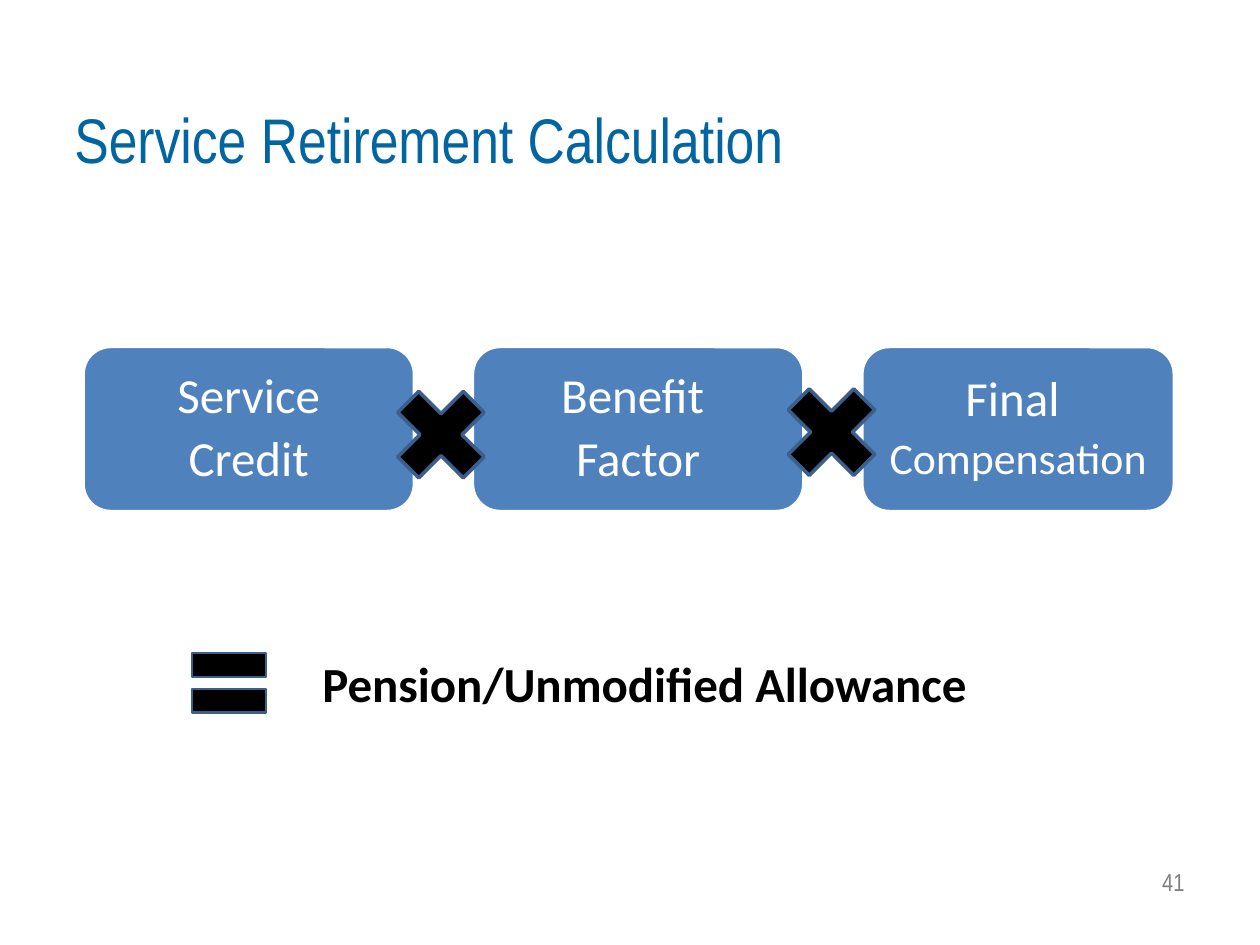
from pptx import Presentation
from pptx.dml.color import RGBColor
from pptx.enum.shapes import MSO_SHAPE
from pptx.enum.text import MSO_ANCHOR, MSO_AUTO_SIZE, PP_ALIGN
from pptx.util import Inches, Pt

ROUNDED = MSO_SHAPE.ROUNDED_RECTANGLE
TIMES, EQUALS = MSO_SHAPE.MATH_MULTIPLY, MSO_SHAPE.MATH_EQUAL
LEFT, CENTER, RIGHT = PP_ALIGN.LEFT, PP_ALIGN.CENTER, PP_ALIGN.RIGHT
TOP, MIDDLE = MSO_ANCHOR.TOP, MSO_ANCHOR.MIDDLE

TITLE = "Service Retirement Calculation"
FACTORS = [
    (2.63, [("Service", 28), ("Credit", 28)]),
    (2.63, [("Benefit ", 28), ("Factor", 28)]),
    (2.48, [("Final ", 28), ("Compensation", 25)]),
]
RESULT = "Pension/Unmodified Allowance"
PAGE = "41"
OPERATORS = [
    (EQUALS, 1.42, 5.02, 0.8, 1.25),
    (TIMES, 6.1, 2.93, 1, 2),
    (TIMES, 3, 2.95, 1, 2),
]
CARD_LEFT, CARD_TOP, CARD_HEIGHT, CARD_GAP = 0.66, 2.75, 1.31, 0.46
CARD_INSET = 0.12

THEME = {
    "heading_font": "Arial Narrow", "body_font": "Calibri",
    "title": "0065A1", "card": "4F81BD", "white": "FFFFFF",
    "black": "000000", "outline": "3A5F8C", "page": "808080",
    "title_size": 36, "body_size": 28, "page_size": 14,
}


def color(name):
    return RGBColor.from_string(THEME[name])


def format_paragraph(p, text, size, font, ink, align=LEFT, bold=False):
    p.text = text
    p.alignment = align
    p.font.size = Pt(size)
    p.font.name = THEME[font]
    p.font.color.rgb = color(ink)
    p.font.bold = bold


def add_text(s, box, *style, **options):
    tf = s.shapes.add_textbox(*map(Inches, box)).text_frame
    tf.word_wrap = True
    format_paragraph(tf.paragraphs[0], *style, **options)


def add_shape(s, kind, box, fill, line, width):
    sp = s.shapes.add_shape(kind, *map(Inches, box))
    sp.shadow.inherit = False
    sp.fill.solid()
    sp.fill.fore_color.rgb = color(fill)
    sp.line.color.rgb = color(line)
    sp.line.width = Pt(width)
    return sp


def add_title(s):
    title = s.shapes.title
    title.left, title.top, title.width, title.height = map(Inches, (0.49, 0.75, 9, 0.71))
    tf = title.text_frame
    tf.auto_size = MSO_AUTO_SIZE.NONE
    tf.vertical_anchor = TOP
    format_paragraph(tf.paragraphs[0], TITLE, THEME["title_size"], "heading_font", "title")


def add_card(s, left, width, lines):
    sp = add_shape(s, ROUNDED, (left, CARD_TOP, width, CARD_HEIGHT), "card", "white", 2)
    tf = sp.text_frame
    tf.word_wrap = True
    tf.vertical_anchor = MIDDLE
    tf.margin_left = tf.margin_right = tf.margin_top = tf.margin_bottom = Inches(CARD_INSET)
    for i, (text, size) in enumerate(lines):
        p = tf.add_paragraph() if i else tf.paragraphs[0]
        format_paragraph(p, text, size, "body_font", "white", CENTER)
        p.line_spacing = 0.9
        p.space_after = Pt(6)


def main():
    prs = Presentation()
    prs.slide_width, prs.slide_height = Inches(10), Inches(7.5)
    s = prs.slides.add_slide(prs.slide_layouts[5])
    add_title(s)
    add_text(s, (7.17, 6.83, 2.33, 0.34), PAGE, THEME["page_size"],
             "heading_font", "page", align=RIGHT)

    left = CARD_LEFT
    for width, lines in FACTORS:
        add_card(s, left, width, lines)
        left += width + CARD_GAP

    add_text(s, (2.46, 5.14, 6.83, 0.57), RESULT, THEME["body_size"],
             "body_font", "black", bold=True)
    for kind, x, y, size, width in OPERATORS:
        add_shape(s, kind, (x, y, size, size), "black", "outline", width)
    prs.save("out.pptx")


if __name__ == "__main__":
    main()
